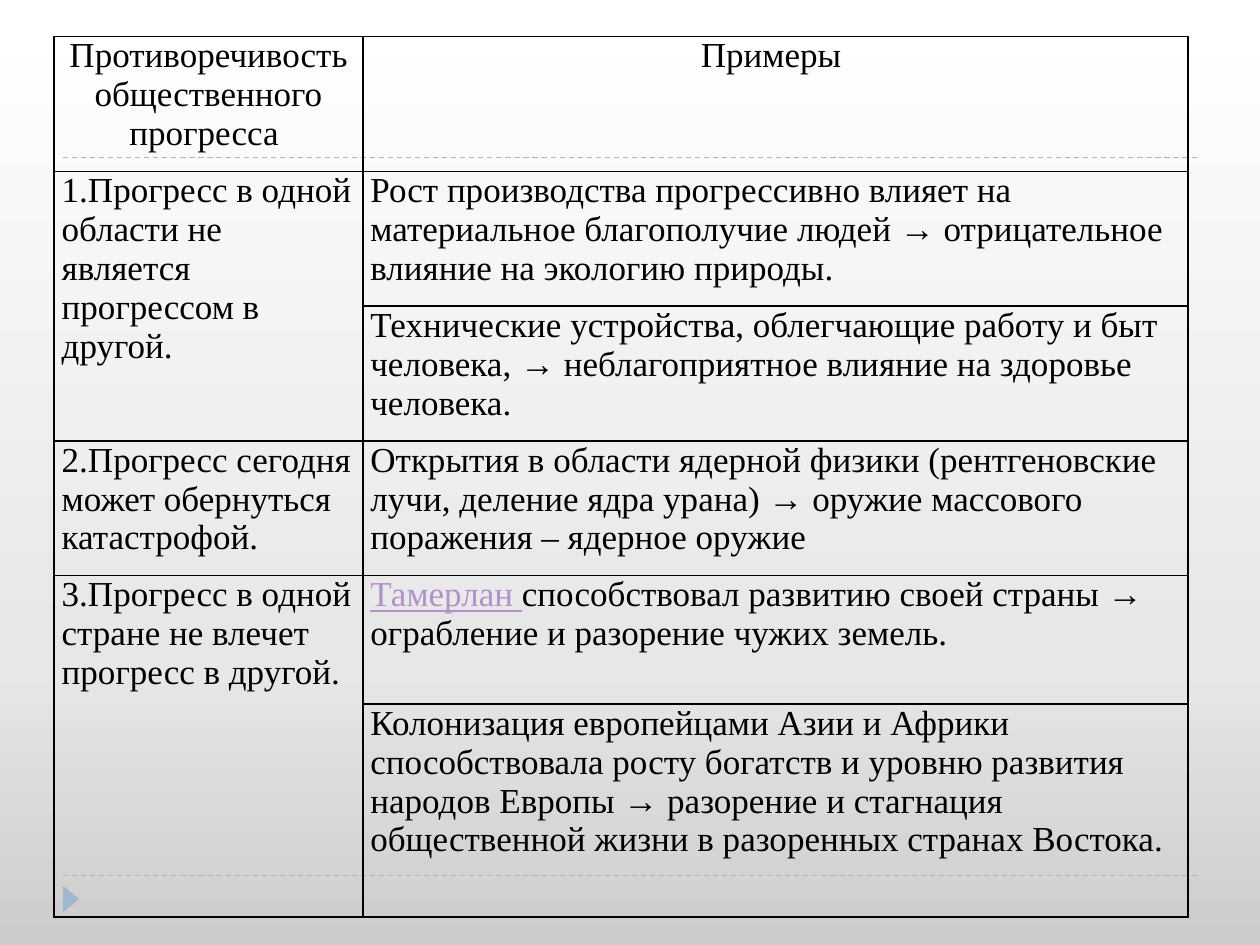
import copy

import pptx
import pptx.dml.color
import pptx.enum.dml
import pptx.enum.shapes
import pptx.enum.text
import pptx.oxml
import pptx.oxml.ns
import pptx.util

Inches = pptx.util.Inches
BLACK, ACCENT, NAME_COLOR = "000000", "9FB8CD", "B292CA"

# Content: a None cell continues the cell above it
HEADINGS = ("Противоречивость общественного прогресса ", "Примеры ")
ROWS = [
    ("1.Прогресс в одной области не является прогрессом в другой.",
     "Рост производства прогрессивно влияет на материальное благополучие людей → "
     "отрицательное влияние на экологию природы."),
    (None,
     "Технические устройства, облегчающие работу и быт человека, → "
     "неблагоприятное влияние на здоровье человека."),
    ("2.Прогресс сегодня может обернуться катастрофой.",
     "Открытия в области ядерной физики (рентгеновские лучи, деление ядра урана) → "
     "оружие массового поражения – ядерное оружие"),
    ("3.Прогресс в одной стране не влечет прогресс в другой.",
     "способствовал развитию своей страны → ограбление и разорение чужих земель."),
    (None,
     "Колонизация европейцами Азии и Африки способствовала росту богатств и уровню "
     "развития народов Европы → разорение и стагнация общественной жизни в "
     "разоренных странах Востока."),
]
UNDERLINED_LEADS = {(4, 1): "Тамерлан "}
COLUMN_WIDTHS = (2.45, 6.55)
ROW_HEIGHTS = (1.07, 1.07, 1.07, 1.07, 1.02, 1.69)
BACKGROUND_STOPS = ((0, "CCCCCC"), (0.3, "E7E7E7"), (1, "FFFFFF"))
RULE_HEIGHTS = (6.95, 1.25)


def rgb(color):
    return pptx.dml.color.RGBColor.from_string(color)


def add_text(paragraph, text, color=BLACK, underline=False, size=20, font="Times New Roman"):
    run = paragraph.add_run()
    run.text = text
    run.font.name = font
    run.font.size = pptx.util.Pt(size)
    run.font.color.rgb = rgb(color)
    run.font.underline = underline


def add_borders(cell, color=BLACK, width=1):
    properties = cell._tc.get_or_add_tcPr()
    for side in ("lnL", "lnR", "lnT", "lnB"):
        properties.append(pptx.oxml.parse_xml(
            f'<a:{side} {pptx.oxml.ns.nsdecls("a")} w="{pptx.util.Pt(width)}">'
            f'<a:solidFill><a:srgbClr val="{color}"/></a:solidFill></a:{side}>'))


def paint_background(slide):
    fill = slide.background.fill
    fill.gradient()
    fill.gradient_angle = 90
    stops = fill._fill._gradFill.gsLst
    stops.append(copy.deepcopy(stops[0]))
    for stop, (position, color) in zip(fill.gradient_stops, BACKGROUND_STOPS):
        stop.position = position
        stop.color.rgb = rgb(color)


def add_decor(slide):
    for y in RULE_HEIGHTS:
        rule = slide.shapes.add_connector(
            pptx.enum.shapes.MSO_CONNECTOR.STRAIGHT,
            Inches(0.5), Inches(y), Inches(9.5), Inches(y))
        rule.line.color.rgb = rgb(ACCENT)
        rule.line.width = pptx.util.Pt(0.75)
        rule.line.dash_style = pptx.enum.dml.MSO_LINE.DASH
        rule._element.spPr.append(pptx.oxml.parse_xml(
            f'<a:effectLst {pptx.oxml.ns.nsdecls("a")}/>'))
    marker = slide.shapes.add_shape(
        pptx.enum.shapes.MSO_SHAPE.ISOSCELES_TRIANGLE,
        Inches(0.46), Inches(7.07), Inches(0.21), Inches(0.13))
    marker.rotation = 90
    marker.shadow.inherit = False
    marker.fill.solid()
    marker.fill.fore_color.rgb = rgb(ACCENT)
    marker.line.fill.background()


def add_progress_table(slide):
    content = [HEADINGS] + ROWS
    frame = slide.shapes.add_table(
        len(content), len(HEADINGS), Inches(0.43), Inches(0.29),
        Inches(sum(COLUMN_WIDTHS)), Inches(sum(ROW_HEIGHTS)))
    table = frame.table
    table.first_row = table.horz_banding = False
    for column, width in zip(table.columns, COLUMN_WIDTHS):
        column.width = Inches(width)
    for row, height in zip(table.rows, ROW_HEIGHTS):
        row.height = Inches(height)

    for r, texts in enumerate(content):
        for c, text in enumerate(texts):
            cell = table.cell(r, c)
            add_borders(cell)
            cell.fill.background()
            cell.margin_left = cell.margin_right = Inches(0.06)
            cell.margin_top = cell.margin_bottom = 0
            if text is None:
                table.cell(r - 1, c).merge(cell)
                continue
            paragraph = cell.text_frame.paragraphs[0]
            if r == 0:
                paragraph.alignment = pptx.enum.text.PP_ALIGN.CENTER
            if (r, c) in UNDERLINED_LEADS:
                add_text(paragraph, UNDERLINED_LEADS[r, c], color=NAME_COLOR, underline=True)
            add_text(paragraph, text)


def main():
    deck = pptx.Presentation()
    deck.slide_width, deck.slide_height = Inches(10), Inches(7.5)
    slide = deck.slides.add_slide(deck.slide_layouts[6])
    paint_background(slide)
    add_decor(slide)
    add_progress_table(slide)
    deck.save("out.pptx")


if __name__ == "__main__":
    main()
